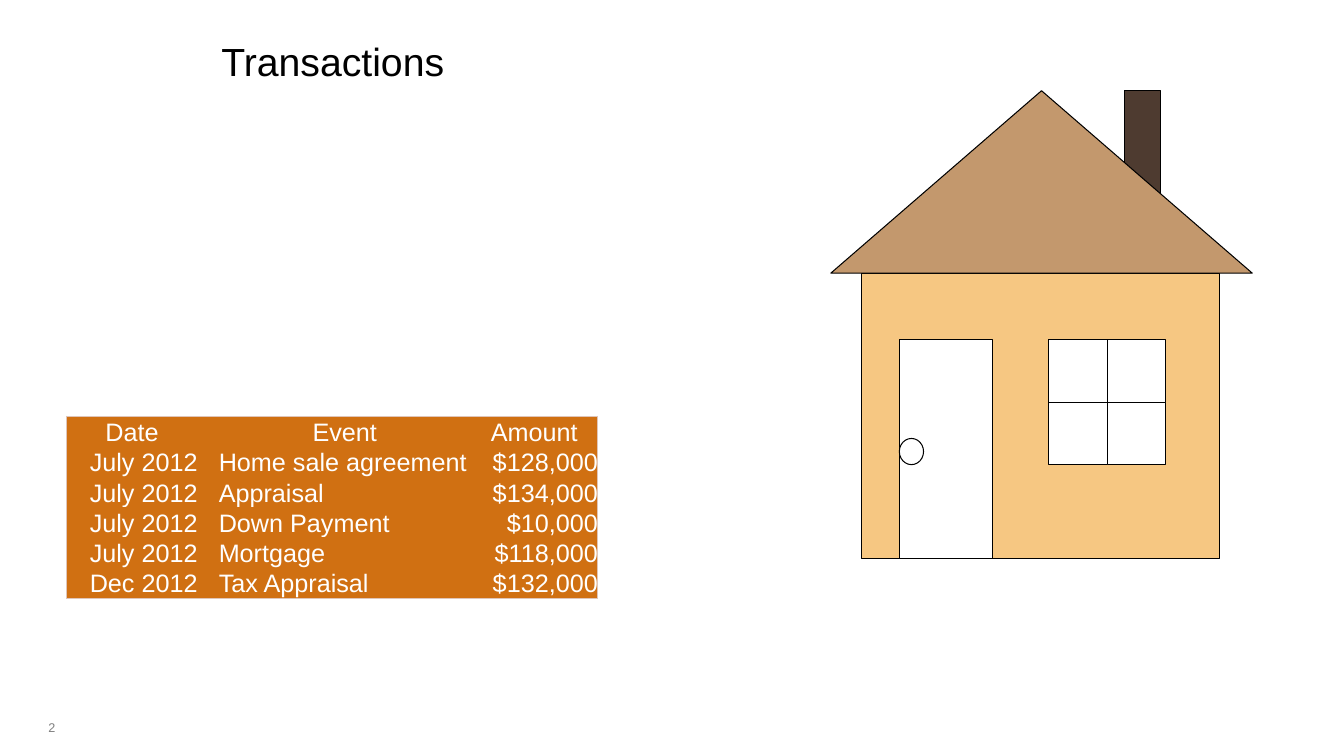
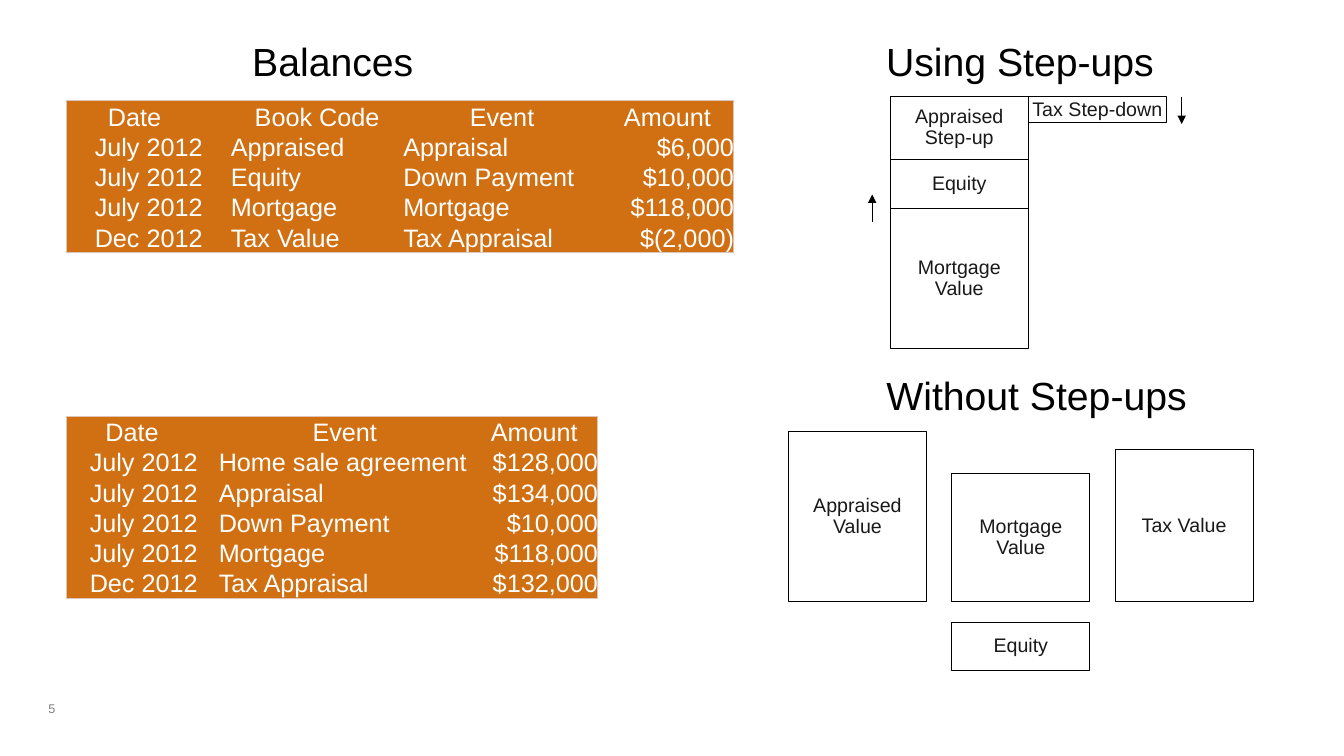
from lxml import etree
from pptx import Presentation
from pptx.dml.color import RGBColor
from pptx.enum.shapes import MSO_CONNECTOR, MSO_SHAPE
from pptx.enum.text import MSO_ANCHOR, MSO_AUTO_SIZE, PP_ALIGN
from pptx.oxml.ns import qn
from pptx.util import Inches, Pt

LEFT, CENTER, RIGHT = PP_ALIGN.LEFT, PP_ALIGN.CENTER, PP_ALIGN.RIGHT
TOP, MIDDLE, BOTTOM = MSO_ANCHOR.TOP, MSO_ANCHOR.MIDDLE, MSO_ANCHOR.BOTTOM
RECT, OVAL, TRIANGLE = MSO_SHAPE.RECTANGLE, MSO_SHAPE.OVAL, MSO_SHAPE.ISOSCELES_TRIANGLE
STRAIGHT = MSO_CONNECTOR.STRAIGHT
NO_FIT = MSO_AUTO_SIZE.NONE

FONT = "Arial"
BLACK, WHITE, INK, GRAY = "000000", "FFFFFF", "191919", "7F7F7F"
ORANGE, BORDER = "D07012", "DFC5B9"
WALL, ROOF, CHIMNEY = "F6C782", "C3986D", "4E3B30"
ROW_H = 0.3
BLOCK_W = 1.37


def rgb(value):
    return RGBColor.from_string(value)


def write(holder, text, size=14, color=INK, align=CENTER, anchor=MIDDLE,
          margins=(0, 0), spacing=0.9):
    holder.vertical_anchor = anchor
    holder.margin_left = holder.margin_right = Inches(margins[0])
    holder.margin_top = holder.margin_bottom = Inches(margins[1])
    tf = getattr(holder, "text_frame", holder)
    for i, line in enumerate(text.split("\n")):
        p = tf.add_paragraph() if i else tf.paragraphs[0]
        p.alignment = align
        p.line_spacing = spacing
        r = p.add_run()
        r.text = line
        r.font.name = FONT
        r.font.size = Pt(size)
        r.font.color.rgb = rgb(color)


prs = Presentation()
prs.slide_width, prs.slide_height = Inches(13.33), Inches(7.5)
layout = prs.slide_layouts[5]
transactions = prs.slides.add_slide(layout)
balances = prs.slides.add_slide(layout)

for s, number, top in [(transactions, "2", 7.14), (balances, "5", 6.95)]:
    sp = s.shapes.add_textbox(Inches(0.48), Inches(top), Inches(3.1), Inches(0.25))
    sp.text_frame.word_wrap = True
    write(sp.text_frame, number, size=9, color=GRAY, align=LEFT, anchor=TOP, spacing=1)

headings = [
    (transactions, "Transactions", 2.08, 0.37, 2.44, True),
    (balances, "Balances", 2.39, 0.37, 1.82, True),
    (balances, "Using Step-ups", 8.67, 0.37, 2.89, False),
    (balances, "Without Step-ups", 8.67, 3.69, 3.22, False),
]
for s, text, left, top, width, is_title in headings:
    box = [Inches(v) for v in (left, top, width, 0.53)]
    if is_title:
        sp = s.shapes.title
        sp.left, sp.top, sp.width, sp.height = box
    else:
        sp = s.shapes.add_textbox(*box)
    sp.text_frame.auto_size = NO_FIT
    sp.text_frame.word_wrap = False
    write(sp.text_frame, text, size=28, color=BLACK, anchor=TOP, margins=(0.1, 0.05))

events = [
    ("Date", "", "Event", "Amount"),
    ("July 2012", "", "Home sale agreement", "$128,000"),
    ("July 2012", "", "Appraisal", "$134,000"),
    ("July 2012", "", "Down Payment", "$10,000"),
    ("July 2012", "", "Mortgage", "$118,000"),
    ("Dec 2012", "", "Tax Appraisal", "$132,000"),
]
book = [
    ("Date", "", "Book Code", "Event", "Amount"),
    ("July 2012", "", "Appraised", "Appraisal", "$6,000"),
    ("July 2012", "", "Equity", "Down Payment", "$10,000"),
    ("July 2012", "", "Mortgage", "Mortgage", "$118,000"),
    ("Dec 2012", "", "Tax Value", "Tax Appraisal", "$(2,000)"),
]
event_widths = [1.3, 0.21, 2.5, 1.26]
book_widths = [1.35, 0.28, 1.71, 1.96, 1.32]
tables = [
    (transactions, 4.13, event_widths, events),
    (balances, 1, book_widths, book),
    (balances, 4.13, event_widths, events),
]
for s, top, widths, rows in tables:
    last_row, last_col = len(rows) - 1, len(widths) - 1
    table = s.shapes.add_table(len(rows), len(widths), Inches(0.66), Inches(top),
                               Inches(sum(widths)), Inches(ROW_H * len(rows))).table
    table.first_row = table.horz_banding = False
    for column, width in zip(table.columns, widths):
        column.width = Inches(width)
    for i, row in enumerate(rows):
        table.rows[i].height = Inches(ROW_H)
        for j, text in enumerate(row):
            cell = table.cell(i, j)
            align = CENTER if i == 0 else RIGHT if j in (0, last_col) else LEFT
            write(cell, text, size=18, color=WHITE, align=align, anchor=BOTTOM)
            tcPr = cell._tc.get_or_add_tcPr()
            edges = {"a:lnL": j == 0, "a:lnR": j == last_col,
                     "a:lnT": i == 0, "a:lnB": i == last_row}
            for tag, outer in edges.items():
                ln = etree.SubElement(tcPr, qn(tag), w=str(Pt(0.75)))
                if outer:
                    fill = etree.SubElement(ln, qn("a:solidFill"))
                    etree.SubElement(fill, qn("a:srgbClr"), val=BORDER)
                else:
                    etree.SubElement(ln, qn("a:noFill"))
            cell.fill.solid()
            cell.fill.fore_color.rgb = rgb(ORANGE)

shapes = [
    (transactions, RECT, 11.15, 0.9, 0.36, 1.14, CHIMNEY, ""),
    (transactions, RECT, 8.54, 2.71, 3.56, 2.83, WALL, ""),
    (transactions, RECT, 8.92, 3.37, 0.92, 2.17, WHITE, ""),
    (transactions, OVAL, 8.92, 4.35, 0.24, 0.26, WHITE, ""),
    (transactions, TRIANGLE, 8.24, 0.9, 4.18, 1.81, ROOF, ""),
]
for i in range(2):
    for j in range(2):
        shapes.append((transactions, RECT, 10.4 + 0.58 * j, 3.37 + 0.62 * i,
                       0.58, 0.62, WHITE, ""))

top = 0.96
for text, height in [("Appraised\nStep-up", 0.62), ("Equity", 0.49), ("Mortgage\nValue", 1.39)]:
    shapes.append((balances, RECT, 8.83, top, BLOCK_W, height, None, text))
    top += height
shapes.append((balances, RECT, 8.83 + BLOCK_W, 0.96, BLOCK_W, 0.26, None, "Tax Step-down"))

values = [("Appraised\nValue", 1.69), ("Mortgage\nValue", 1.27), ("Tax Value", 1.51)]
for i, (text, height) in enumerate(values):
    shapes.append((balances, RECT, 7.82 + 1.62 * i, 5.97 - height, BLOCK_W, height, None, text))
shapes.append((balances, RECT, 9.44, 6.18, BLOCK_W, 0.47, None, "Equity"))

for s, kind, left, top, width, height, color, text in shapes:
    sp = s.shapes.add_shape(kind, Inches(left), Inches(top), Inches(width), Inches(height))
    sp.shadow.inherit = False
    sp.line.color.rgb = rgb(BLACK)
    sp.line.width = Pt(0.75)
    if color:
        sp.fill.solid()
        sp.fill.fore_color.rgb = rgb(color)
    else:
        sp.fill.background()
    if text:
        write(sp.text_frame, text)

for x, start, end in [(11.72, 0.96, 1.23), (8.65, 2.2, 1.93)]:
    arrow = balances.shapes.add_connector(STRAIGHT, Inches(x), Inches(start),
                                          Inches(x), Inches(end))
    arrow.line.color.rgb = rgb(BLACK)
    arrow.line.width = Pt(0.75)
    spPr = arrow._element.spPr
    etree.SubElement(spPr.find(qn("a:ln")), qn("a:tailEnd"), type="triangle")
    etree.SubElement(spPr, qn("a:effectLst"))

prs.save("out.pptx")
